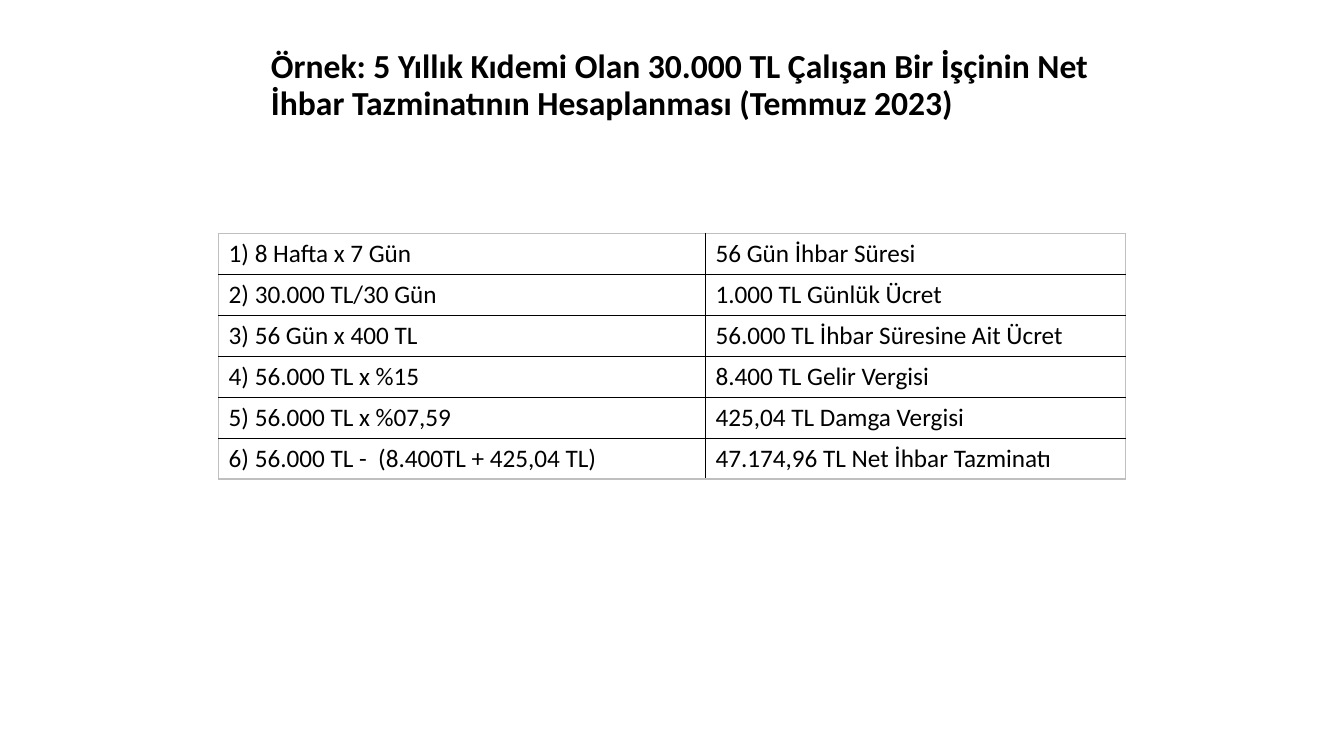
from dataclasses import dataclass

from lxml import etree
from pptx import Presentation
from pptx import util as u
from pptx.dml.color import RGBColor
from pptx.enum import text
from pptx.oxml.ns import qn


@dataclass(frozen=True)
class Theme:
    font: str = "Calibri"
    ink: str = "000000"
    frame: str = "BFBFBF"
    title_size: int = 24
    cell_size: int = 18
    border_width: int = 1


@dataclass(frozen=True)
class Step:
    calculation: str
    result: str


THEME = Theme()
TITLE = ("Örnek: 5 Yıllık Kıdemi Olan 30.000 TL Çalışan Bir İşçinin Net "
         "İhbar Tazminatının Hesaplanması (Temmuz 2023)")
STEPS = [
    Step("1) 8 Hafta x 7 Gün", "56 Gün İhbar Süresi"),
    Step("2) 30.000 TL/30 Gün", "1.000 TL Günlük Ücret"),
    Step("3) 56 Gün x 400 TL", "56.000 TL İhbar Süresine Ait Ücret"),
    Step("4) 56.000 TL x %15", "8.400 TL Gelir Vergisi"),
    Step("5) 56.000 TL x %07,59", "425,04 TL Damga Vergisi"),
    Step("6) 56.000 TL -  (8.400TL + 425,04 TL)", "47.174,96 TL Net İhbar Tazminatı"),
]
COLUMN_WIDTHS = (u.Cm(12.27), u.Cm(10.59))
ROW_HEIGHT = u.Cm(1.03)


def format_text(frame, size: int, bold: bool = False) -> None:
    for para in frame.paragraphs:
        for span in para.runs:
            span.font.name = THEME.font
            span.font.size = u.Pt(size)
            span.font.bold = bold
            span.font.color.rgb = RGBColor.from_string(THEME.ink)


def add_border(cell, side: str, color: str) -> None:
    """Draw one cell side: L, R, T or B, called in that order."""
    properties = cell._tc.get_or_add_tcPr()
    line = etree.SubElement(properties, qn(f"a:ln{side}"), w=str(u.Pt(THEME.border_width)))
    fill = etree.SubElement(line, qn("a:solidFill"))
    etree.SubElement(fill, qn("a:srgbClr"), val=color)


def add_title(page) -> None:
    box = page.shapes.add_textbox(u.Cm(6.58), u.Cm(0.58), u.Cm(22.86), u.Cm(3.18))
    frame = box.text_frame
    frame.word_wrap = True
    frame.vertical_anchor = text.MSO_ANCHOR.MIDDLE
    frame.text = TITLE
    frame.paragraphs[0].line_spacing = 0.9
    format_text(frame, THEME.title_size, bold=True)


def add_steps(page) -> None:
    rows, columns = len(STEPS), len(COLUMN_WIDTHS)
    table = page.shapes.add_table(rows, columns, u.Cm(5.51), u.Cm(5.89),
                                  sum(COLUMN_WIDTHS), ROW_HEIGHT * rows).table
    table.first_row = False
    table.horz_banding = False
    for column, width in zip(table.columns, COLUMN_WIDTHS):
        column.width = width
    for i, step in enumerate(STEPS):
        table.rows[i].height = ROW_HEIGHT
        for j, words in enumerate((step.calculation, step.result)):
            cell = table.cell(i, j)
            cell.text = words
            format_text(cell.text_frame, THEME.cell_size)
            outer = {"L": j == 0, "R": j == columns - 1, "T": i == 0, "B": i == rows - 1}
            for side, on_frame in outer.items():
                add_border(cell, side, THEME.frame if on_frame else THEME.ink)
            cell.fill.background()


def main() -> None:
    deck = Presentation()
    deck.slide_width, deck.slide_height = u.Cm(33.87), u.Cm(19.05)
    page = deck.slides.add_slide(deck.slide_layouts[6])
    add_title(page)
    add_steps(page)
    deck.save("out.pptx")


if __name__ == "__main__":
    main()
